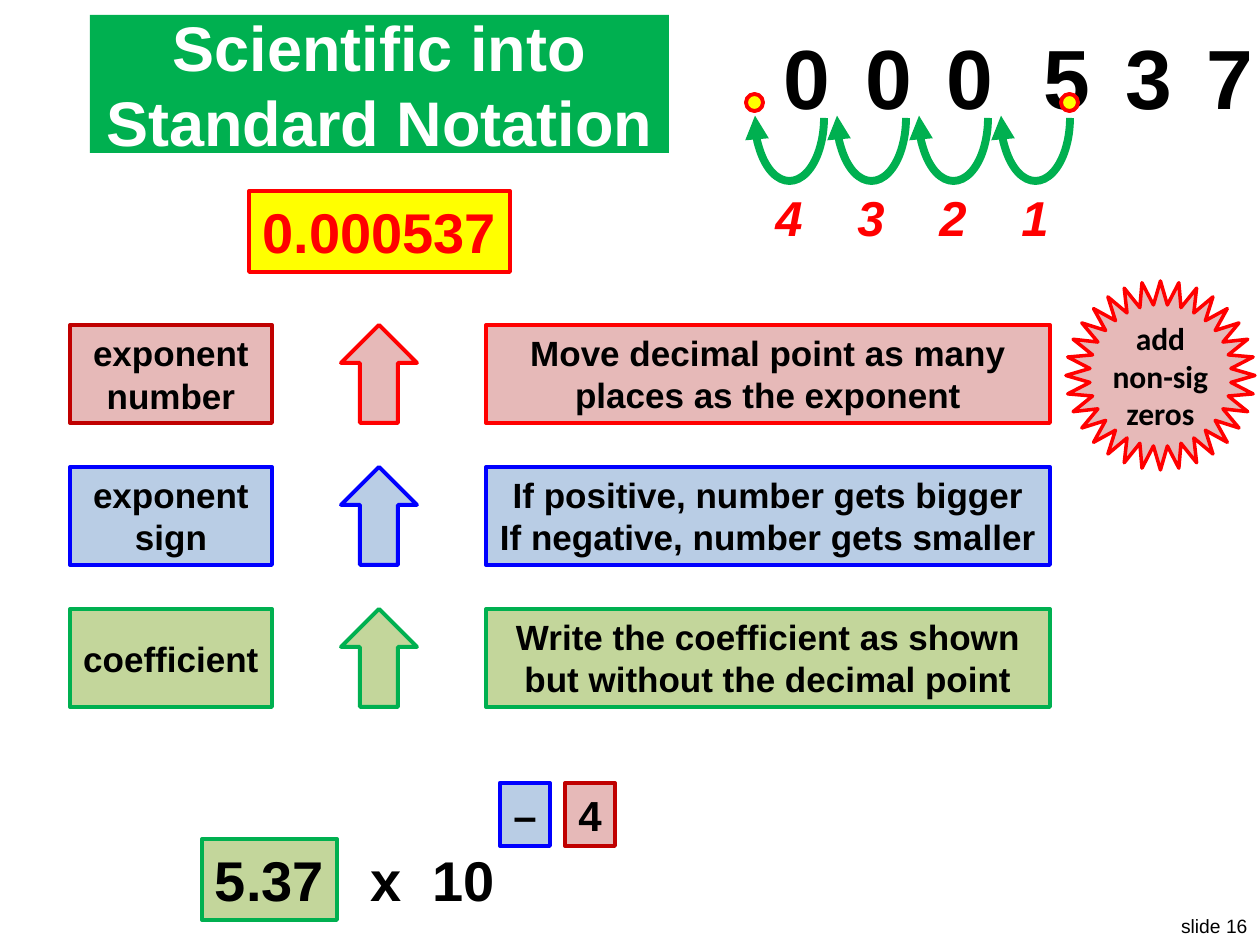
from lxml import etree
from pptx import Presentation
from pptx.dml.color import RGBColor
from pptx.enum.shapes import MSO_SHAPE as SHAPE
from pptx.enum.text import MSO_ANCHOR as ANCHOR, PP_ALIGN as ALIGN
from pptx.oxml.ns import qn
from pptx.util import Emu, Pt

BLACK = RGBColor(0x00, 0x00, 0x00)
WHITE = RGBColor(0xFF, 0xFF, 0xFF)
RED = RGBColor(0xFF, 0x00, 0x00)
DARK_RED = RGBColor(0xC0, 0x00, 0x00)
PINK = RGBColor(0xE6, 0xB9, 0xB8)
BLUE = RGBColor(0x00, 0x00, 0xFF)
PALE_BLUE = RGBColor(0xB9, 0xCD, 0xE5)
GREEN = RGBColor(0x00, 0xB0, 0x50)
PALE_GREEN = RGBColor(0xC3, 0xD6, 0x9B)
YELLOW = RGBColor(0xFF, 0xFF, 0x00)


def px(n):
    """Pixels at 126 to the inch, as EMU."""
    return Emu(round(n * 914400 / 126))


prs = Presentation()
prs.slide_width, prs.slide_height = px(1260), px(945)
s = prs.slides.add_slide(prs.slide_layouts[6])


def add(x, y, w, h, text="", kind=None, fill=None, line=None, weight=2.25,
        flip=False, size=20, color=BLACK, font="Arial", bold=True,
        italic=False, align=ALIGN.CENTER, anchor=ANCHOR.TOP, wrap=False,
        spacing=0):
    """Add a preset shape, or a text box when no kind is given."""
    if kind is None:
        sp = s.shapes.add_textbox(px(x), px(y), px(w), px(h))
    else:
        sp = s.shapes.add_shape(kind, px(x), px(y), px(w), px(h))
        sp.shadow.inherit = False
        for part, shade in ((sp.fill, fill), (sp.line.fill, line)):
            if shade is None:
                part.background()
            else:
                part.solid()
                part.fore_color.rgb = shade
        if line is not None:
            sp.line.width = Pt(weight)
    if flip:
        sp._element.spPr.find(qn("a:xfrm")).set("flipV", "1")
    if text:
        tf = sp.text_frame
        tf.word_wrap = wrap
        tf.vertical_anchor = anchor
        for i, words in enumerate(text.split("\n")):
            p = tf.add_paragraph() if i else tf.paragraphs[0]
            p.alignment = align
            r = p.add_run()
            r.text = words
            r.font.name, r.font.size = font, Pt(size)
            r.font.bold, r.font.italic = bold, italic
            r.font.color.rgb = color
            if spacing:
                r.font._element.set("spc", str(spacing))
    return sp


# Slide number
add(1166, 908, 94, 37, "slide 16", size=11, bold=False, align=ALIGN.RIGHT)

# Title and result
add(90, 15, 579, 138, "Scientific into Standard Notation", SHAPE.RECTANGLE,
    GREEN, size=36, color=WHITE, anchor=ANCHOR.MIDDLE, wrap=True)
add(249, 191, 261, 81, "0.000537", SHAPE.RECTANGLE, YELLOW, RED,
    size=32, color=RED)

# Rule rows: part of the number, arrow, what it tells you
rows = [
    ("exponent\nnumber", "Move decimal point as many places as the exponent",
     PINK, DARK_RED, RED),
    ("exponent\nsign",
     "If positive, number gets bigger\nIf negative, number gets smaller",
     PALE_BLUE, BLUE, BLUE),
    ("coefficient",
     "Write the coefficient as shown but without the decimal point",
     PALE_GREEN, GREEN, GREEN),
]
for i, (name, rule, fill, name_line, line) in enumerate(rows):
    y = 325 + 142 * i
    add(486, y, 564, 98, rule, SHAPE.RECTANGLE, fill, line,
        wrap="\n" not in rule)
    add(70, y, 202, 98, name, SHAPE.RECTANGLE, fill, name_line,
        anchor=ANCHOR.MIDDLE)
    add(341, y, 76, 98, kind=SHAPE.DOWN_ARROW, fill=fill, line=line, flip=True)

# Digits
add(993, 19, 273, 115, "537", size=48, spacing=2000, align=ALIGN.RIGHT)
add(752, 19, 273, 115, "000", size=48, spacing=2000)

# Decimal point hops, counted from the right
for hop in range(1, 5):
    x = 1001 - 82 * (hop - 1)
    arc = add(x, 55, 69, 126, kind=SHAPE.ARC, line=GREEN, weight=4.5, flip=True)
    arc.adjustments[0], arc.adjustments[1] = 105.738, 0
    etree.SubElement(arc.line._get_or_add_ln(), qn("a:headEnd"), type="triangle")
    add(x + 8, 181, 53, 72, str(hop), size=28, color=RED, italic=True,
        align=ALIGN.LEFT)

# Decimal point before and after
for x in (1061, 746):
    add(x, 94, 17, 17, kind=SHAPE.OVAL, fill=YELLOW, line=RED)

# Scientific notation
times = add(341, 839, 170, 81, "x ", size=32, align=ALIGN.LEFT, wrap=True,
            spacing=445)  # spacing widens the gap before 10
times.text_frame.margin_left, times.text_frame.margin_right = px(29), 0
ten = times.text_frame.paragraphs[0].add_run()
ten.text = "10"
ten.font.name, ten.font.size, ten.font.bold = "Arial", Pt(32), True
ten.font.color.rgb = BLACK
add(202, 839, 135, 81, "5.37", SHAPE.RECTANGLE, PALE_GREEN, GREEN, size=32)
add(500, 783, 50, 63, "–", SHAPE.RECTANGLE, PALE_BLUE, BLUE, size=24)
add(565, 783, 50, 63, "4", SHAPE.RECTANGLE, PINK, DARK_RED, size=24)

# Reminder star
star = add(1066, 281, 189, 189, "add non-sig zeros", SHAPE.STAR_32_POINT, PINK,
           RED, weight=2, size=18, font="Calibri", anchor=ANCHOR.MIDDLE,
           wrap=True)
tf = star.text_frame
tf.margin_left = tf.margin_right = tf.margin_top = tf.margin_bottom = 0

prs.save("out.pptx")
